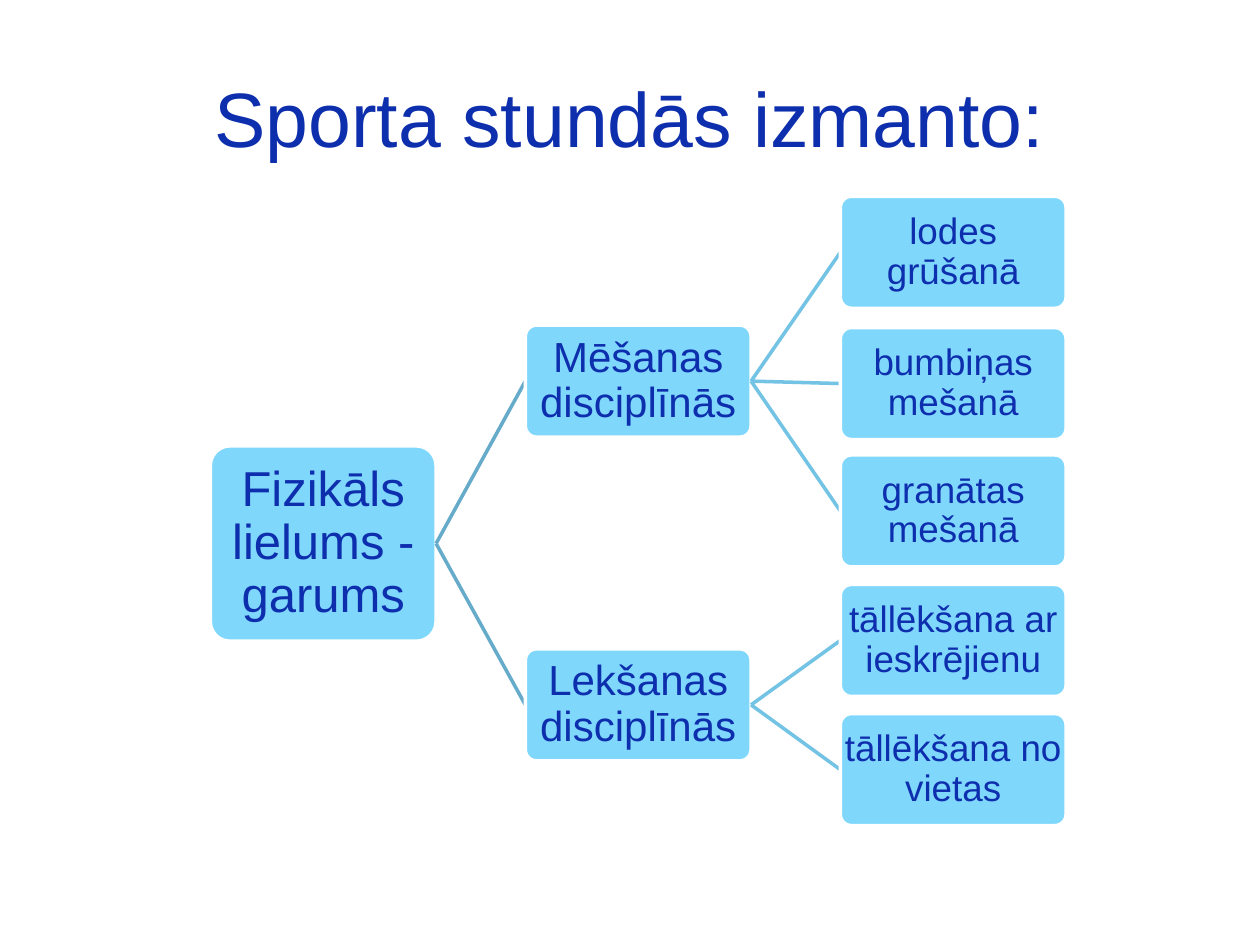
import pptx
import pptx.dml.color
import pptx.enum.shapes
import pptx.enum.text
import pptx.oxml.ns
import pptx.util
from dataclasses import dataclass
from lxml import etree

Pt = pptx.util.Pt
RGB = pptx.dml.color.RGBColor.from_string


@dataclass(frozen=True)
class Theme:
    font: str = "Arial"
    text: str = "0E2FAD"
    fill: str = "7FD7FC"
    border: str = "FFFFFF"
    links: tuple = ("", "66ACCA", "73C3E5")
    title_size: int = 44
    sizes: tuple = (28, 24, 21)


theme = Theme()


def write(box, text, size, inset):
    frame = box.text_frame
    frame.word_wrap = True
    frame.vertical_anchor = pptx.enum.text.MSO_ANCHOR.MIDDLE
    frame.margin_left = frame.margin_right = Pt(inset)
    frame.margin_top = frame.margin_bottom = Pt(inset)
    para = frame.paragraphs[0]
    para.alignment = pptx.enum.text.PP_ALIGN.CENTER
    span = para.add_run()
    span.text = text
    span.font.name = theme.font
    span.font.size = Pt(size)
    span.font.color.rgb = RGB(theme.text)
    return para


deck = pptx.Presentation()
deck.slide_width, deck.slide_height = Pt(720), Pt(540)
page = deck.slides.add_slide(deck.slide_layouts[6])

title = page.shapes.add_textbox(Pt(36), Pt(21.6), Pt(648), Pt(90))
write(title, "Sporta stundās izmanto:", theme.title_size, 3.6)

box_width = 129
box_heights = (111.6, 64, 64)
column_lefts = [120.2 + 180 * level for level in range(3)]

root = "Fizikāls lielums - garums"
throws = "Mēšanas disciplīnās"
jumps = "Lekšanas disciplīnās"
nodes = [
    (root, None, 0, 310.6),
    (throws, root, 1, 217.8),
    ("lodes grūšanā", throws, 2, 144.2),
    ("bumbiņas mešanā", throws, 2, 219.2),
    ("granātas mešanā", throws, 2, 292),
    (jumps, root, 1, 402.8),
    ("tāllēkšana ar ieskrējienu", jumps, 2, 366),
    ("tāllēkšana no vietas", jumps, 2, 439.8),
]
middles = {text: middle for text, parent, level, middle in nodes}

for text, parent, level, middle in nodes:
    left, height = column_lefts[level], box_heights[level]
    if parent:
        link = page.shapes.add_connector(
            pptx.enum.shapes.MSO_CONNECTOR.STRAIGHT,
            Pt(column_lefts[level - 1] + box_width), Pt(middles[parent]),
            Pt(left), Pt(middle))
        link.line.color.rgb = RGB(theme.links[level])
        link.line.width = Pt(2)
        etree.SubElement(link._element.spPr, pptx.oxml.ns.qn("a:effectLst"))

    box = page.shapes.add_shape(
        pptx.enum.shapes.MSO_SHAPE.ROUNDED_RECTANGLE,
        Pt(left), Pt(middle - height / 2), Pt(box_width), Pt(height))
    box.adjustments[0] = 0.1
    box.shadow.inherit = False
    box.fill.solid()
    box.fill.fore_color.rgb = RGB(theme.fill)
    box.line.color.rgb = RGB(theme.border)
    box.line.width = Pt(2)
    para = write(box, text, theme.sizes[level], 0)
    para.line_spacing = 0.9

deck.save("out.pptx")
